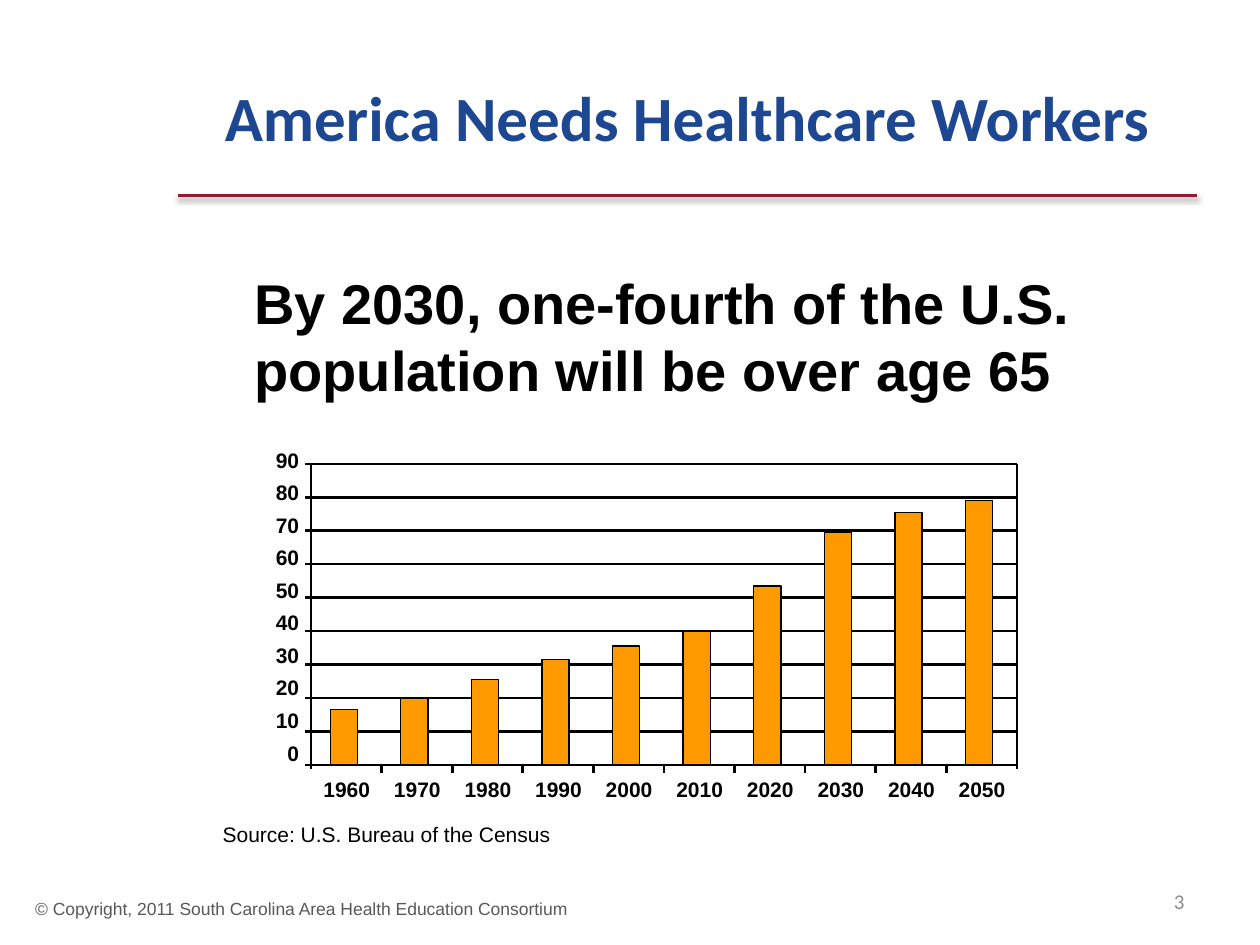
from lxml.etree import SubElement
from pptx import Presentation
from pptx.dml.color import RGBColor
from pptx.enum.shapes import MSO_CONNECTOR as Link, MSO_SHAPE as Preset
from pptx.enum.text import MSO_ANCHOR as Anchor, PP_ALIGN as Align
from pptx.oxml.ns import qn
from pptx.util import Cm, Pt

BLACK = "000000"
ORANGE = "FF9900"
RED = "971934"
BLUE = "1D4790"

PLOT_LEFT, PLOT_RIGHT = 6.27, 20.5
PLOT_TOP, PLOT_BASE = 9.35, 15.42
AXIS_MAX, AXIS_STEP = 90, 10
OVERHANG = 0.12
BAR_WIDTH = 0.55
POPULATION = {
    "1960": 16.5, "1970": 20, "1980": 25.5, "1990": 31.5, "2000": 35.5,
    "2010": 40, "2020": 53.5, "2030": 69.5, "2040": 75.5, "2050": 79,
}


def colour(value):
    return RGBColor.from_string(value)


class SlideBuilder:
    font = "Arial"
    size = 12
    ink = BLACK

    def __init__(self, page):
        self.page = page

    def text(self, lines, left, top, width, height, size=None, ink=None,
             font=None, bold=False, align=Align.LEFT, anchor=Anchor.TOP, gap=0):
        box = self.page.shapes.add_textbox(Cm(left), Cm(top), Cm(width), Cm(height))
        frame = box.text_frame
        frame.word_wrap = True
        frame.vertical_anchor = anchor
        for index, line in enumerate(lines):
            para = frame.add_paragraph() if index else frame.paragraphs[0]
            para.alignment = align
            if index and gap:
                para.space_before = Pt(gap)
            span = para.add_run()
            span.text = line
            span.font.name = font or self.font
            span.font.size = Pt(size or self.size)
            span.font.bold = bold
            span.font.color.rgb = colour(ink or self.ink)

    def line(self, left, top, right, bottom, ink=BLACK, weight=1.5, shaded=False):
        rule = self.page.shapes.add_connector(
            Link.STRAIGHT, Cm(left), Cm(top), Cm(right), Cm(bottom))
        rule.line.color.rgb = colour(ink)
        rule.line.width = Pt(weight)
        effects = SubElement(rule._element.spPr, qn("a:effectLst"))
        if shaded:
            shadow = SubElement(effects, qn("a:outerShdw"), blurRad="40000",
                                dist="20000", dir="5400000", rotWithShape="0")
            shade = SubElement(shadow, qn("a:srgbClr"), val=BLACK)
            SubElement(shade, qn("a:alpha"), val="38000")

    def bar(self, left, top, width, height):
        bar = self.page.shapes.add_shape(
            Preset.RECTANGLE, Cm(left), Cm(top), Cm(width), Cm(height))
        bar.shadow.inherit = False
        bar.fill.solid()
        bar.fill.fore_color.rgb = colour(ORANGE)
        bar.line.color.rgb = colour(BLACK)
        bar.line.width = Pt(0.75)

    def bar_graph(self):
        pitch = (PLOT_RIGHT - PLOT_LEFT) / len(POPULATION)
        scale = (PLOT_BASE - PLOT_TOP) / AXIS_MAX
        levels = range(AXIS_MAX, -1, -AXIS_STEP)

        for index, year in enumerate(POPULATION):
            self.text([year], PLOT_LEFT + index * pitch, 15.52, 1.63, 0.76, bold=True)
        for level in levels:
            height = PLOT_BASE - level * scale
            self.line(PLOT_LEFT - OVERHANG, height, PLOT_RIGHT, height)
        for side in (PLOT_LEFT, PLOT_RIGHT):
            self.line(side, PLOT_TOP, side, PLOT_BASE + 0.09)
        for index in range(1, len(POPULATION)):
            tick = PLOT_LEFT + index * pitch
            self.line(tick, PLOT_BASE, tick, PLOT_BASE + 0.16)
        self.text([str(level) for level in levels], 4.65, 8.89, 1.63, 6.71,
                  bold=True, align=Align.RIGHT, gap=4.2)
        for index, value in enumerate(POPULATION.values()):
            left = PLOT_LEFT + (index + 0.5) * pitch - BAR_WIDTH / 2 - 0.05
            self.bar(left, PLOT_BASE - value * scale, BAR_WIDTH, value * scale)


def main():
    deck = Presentation()
    deck.slide_width, deck.slide_height = Cm(25.4), Cm(19.05)
    builder = SlideBuilder(deck.slides.add_slide(deck.slide_layouts[6]))

    builder.line(3.58, 3.94, 24.13, 3.94, ink=RED, weight=2, shaded=True)
    builder.text(["© Copyright, 2011 South Carolina Area Health Education Consortium"],
                 0.46, 17.98, 13.31, 0.69, size=10, ink="595959")
    builder.text(["America Needs Healthcare Workers"], 3.58, 0.76, 20.55, 3.18,
                 size=36, ink=BLUE, font="Calibri", bold=True,
                 align=Align.CENTER, anchor=Anchor.MIDDLE)
    builder.text(["By 2030, one-fourth of the U.S. population will be over age 65"],
                 4.88, 5.28, 17.81, 2.97, size=32, bold=True)
    builder.bar_graph()
    builder.text(["Source: U.S. Bureau of the Census"], 4.24, 16.43, 7.44, 0.76)
    builder.text(["3"], 22.25, 17.65, 1.88, 1.02, ink="8C8C8C", font="Calibri",
                 align=Align.RIGHT, anchor=Anchor.MIDDLE)
    deck.save("out.pptx")


if __name__ == "__main__":
    main()
